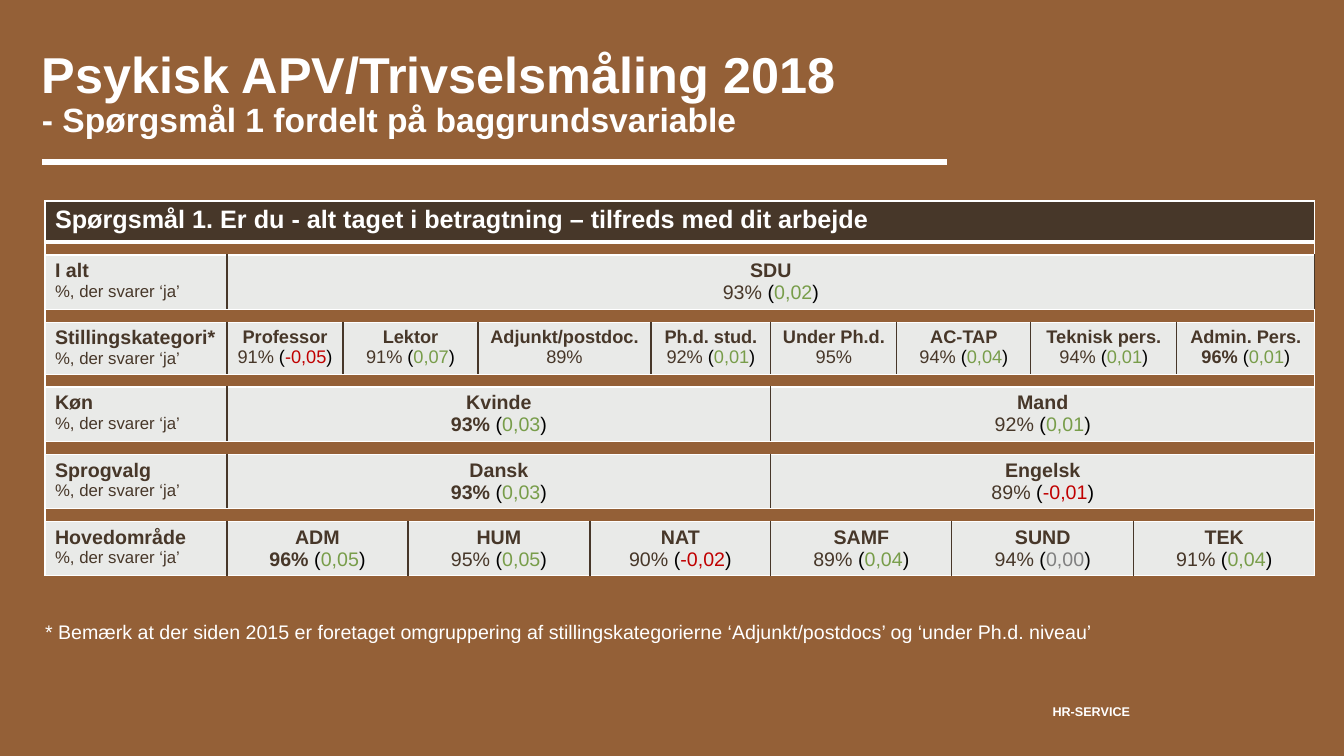
import collections
import lxml.etree
import pptx
import pptx.dml.color
import pptx.enum.shapes
import pptx.enum.text
import pptx.oxml.ns
import pptx.util

EMU_PER_PX = 914400 / 100.8
COLORS = {
    "background": "946037", "dark": "473729", "cell": "E9EAE8", "white": "FFFFFF",
    "black": "000000", "rise": "789D4A", "fall": "C00000", "same": "808080",
}
ALIGN = pptx.enum.text.PP_ALIGN
ANCHOR = pptx.enum.text.MSO_ANCHOR

Answer = collections.namedtuple("Answer", "name share change span bold", defaults=(False,))
Question = collections.namedtuple("Question", "label height size answers")

COLUMN_WIDTHS = [182, 116, 65, 70, 112, 61, 120, 126, 55, 79, 103, 43, 138]
HEADER_HEIGHT, GAP_HEIGHT = 41, 13
QUESTIONS = [
    Question("I alt", 54, 14, [Answer("SDU", "93%", "0,02", 12)]),
    Question("Stillingskategori*", 52, 13, [
        Answer("Professor", "91%", "-0,05", 1),
        Answer("Lektor", "91%", "0,07", 2),
        Answer("Adjunkt/postdoc.", "89%", "", 2),
        Answer("Ph.d. stud.", "92%", "0,01", 1),
        Answer("Under Ph.d.", "95%", "", 1),
        Answer("AC-TAP", "94%", "0,04", 2),
        Answer("Teknisk pers.", "94%", "0,01", 2),
        Answer("Admin. Pers.", "96%", "0,01", 1, True),
    ]),
    Question("Køn", 54, 14, [
        Answer("Kvinde", "93%", "0,03", 6, True),
        Answer("Mand", "92%", "0,01", 6),
    ]),
    Question("Sprogvalg", 54, 14, [
        Answer("Dansk", "93%", "0,03", 6, True),
        Answer("Engelsk", "89%", "-0,01", 6),
    ]),
    Question("Hovedområde", 54, 14, [
        Answer("ADM", "96%", "0,05", 2, True),
        Answer("HUM", "95%", "0,05", 2),
        Answer("NAT", "90%", "-0,02", 2),
        Answer("SAMF", "89%", "0,04", 2),
        Answer("SUND", "94%", "0,00", 2),
        Answer("TEK", "91%", "0,04", 2),
    ]),
]


def px(length):
    return pptx.util.Emu(round(length * EMU_PER_PX))


def rgb(color):
    return pptx.dml.color.RGBColor.from_string(COLORS[color])


def change_color(change):
    if change.startswith("-"):
        return "fall"
    return "same" if change == "0,00" else "rise"


class SlideBuilder:
    font_name = "Arial"

    def __init__(self, presentation):
        self.slide = presentation.slides.add_slide(presentation.slide_layouts[5])
        self.slide.background.fill.solid()
        self.slide.background.fill.fore_color.rgb = rgb("background")

    def run(self, paragraph, text, size, color, bold=False):
        run = paragraph.add_run()
        run.text = text
        run.font.name = self.font_name
        run.font.size = pptx.util.Pt(size)
        run.font.bold = bold
        run.font.color.rgb = rgb(color)

    def frame(self, shape, anchor, wrap):
        frame = shape.text_frame
        frame.margin_left = frame.margin_right = frame.margin_top = frame.margin_bottom = 0
        frame.vertical_anchor = anchor
        frame.word_wrap = wrap
        frame.auto_size = pptx.enum.text.MSO_AUTO_SIZE.NONE
        return frame.paragraphs[0]

    def title(self, left, top, width, height, heading, subheading):
        shape = self.slide.shapes.title
        shape.left, shape.top, shape.width, shape.height = map(px, (left, top, width, height))
        paragraph = self.frame(shape, ANCHOR.TOP, True)
        paragraph.alignment = ALIGN.LEFT
        paragraph.line_spacing = 0.89
        self.run(paragraph, heading, 36, "white", True)
        paragraph.add_line_break()
        self.run(paragraph, subheading, 24, "white", True)

    def text(self, left, top, width, height, text, size, bold=False,
             alignment=ALIGN.LEFT, anchor=ANCHOR.TOP, wrap=True):
        shape = self.slide.shapes.add_textbox(*map(px, (left, top, width, height)))
        paragraph = self.frame(shape, anchor, wrap)
        paragraph.alignment = alignment
        self.run(paragraph, text, size, "white", bold)

    def rule(self, left, right, y, weight):
        line = self.slide.shapes.add_connector(
            pptx.enum.shapes.MSO_CONNECTOR.STRAIGHT, px(left), px(y), px(right), px(y))
        line.line.color.rgb = rgb("white")
        line.line.width = pptx.util.Pt(weight)
        lxml.etree.SubElement(line._element.spPr, pptx.oxml.ns.qn("a:effectLst"))

    def borders(self, cell, left, right, bottom_weight):
        properties = cell._tc.get_or_add_tcPr()
        sides = [("L", left, 1), ("R", right, 1), ("T", "white", 1), ("B", "white", bottom_weight)]
        for side, color, weight in sides:
            line = lxml.etree.SubElement(
                properties, pptx.oxml.ns.qn(f"a:ln{side}"), w=str(pptx.util.Pt(weight)))
            fill = lxml.etree.SubElement(line, pptx.oxml.ns.qn("a:solidFill"))
            lxml.etree.SubElement(fill, pptx.oxml.ns.qn("a:srgbClr"), val=COLORS[color])

    def block(self, table, row, column, span, fill, left="white", right="white", bottom_weight=1):
        for index in range(column, column + span):
            cell = table.cell(row, index)
            self.borders(cell, left, right, bottom_weight)
            if fill:
                cell.fill.solid()
                cell.fill.fore_color.rgb = rgb(fill)
            else:
                cell.fill.background()
        origin = table.cell(row, column)
        if span > 1:
            origin.merge(table.cell(row, column + span - 1))
        return origin

    def gap_row(self, table, row):
        self.block(table, row, 0, len(COLUMN_WIDTHS), None)
        for cell in table.rows[row].cells:
            cell.margin_top = cell.margin_bottom = 0
            lxml.etree.SubElement(
                cell.text_frame.paragraphs[0]._p, pptx.oxml.ns.qn("a:endParaRPr"), sz="200")

    def question_row(self, table, row, question):
        label = self.block(table, row, 0, 1, "cell", right="dark").text_frame
        self.run(label.paragraphs[0], question.label, 14, "dark", True)
        self.run(label.add_paragraph(), "%, der svarer ‘ja’", 12, "dark")
        column = 1
        for index, answer in enumerate(question.answers):
            last = 0 < index == len(question.answers) - 1
            cell = self.block(table, row, column, answer.span, "cell",
                              left="dark", right="white" if last else "dark")
            self.answer(cell.text_frame, answer, question.size)
            column += answer.span

    def answer(self, frame, answer, size):
        name, result = frame.paragraphs[0], frame.add_paragraph()
        name.alignment = result.alignment = ALIGN.CENTER
        self.run(name, answer.name, size, "dark", True)
        self.run(result, answer.share, size, "dark", answer.bold)
        if answer.change:
            self.run(result, " (", size, "black")
            self.run(result, answer.change, size, change_color(answer.change))
            self.run(result, ")", size, "black")

    def table(self, left, top, heading, questions):
        heights = [HEADER_HEIGHT]
        for question in questions:
            heights += [GAP_HEIGHT, question.height]
        table = self.slide.shapes.add_table(
            len(heights), len(COLUMN_WIDTHS), px(left), px(top),
            px(sum(COLUMN_WIDTHS)), px(sum(heights))).table
        table.first_row = table.horz_banding = False
        for column, width in zip(table.columns, COLUMN_WIDTHS):
            column.width = px(width)
        for row, height in zip(table.rows, heights):
            row.height = px(height)
        header = self.block(table, 0, 0, len(COLUMN_WIDTHS), "dark", bottom_weight=3)
        self.run(header.text_frame.paragraphs[0], heading, 18, "white", True)
        for index, question in enumerate(questions):
            self.gap_row(table, 2 * index + 1)
            self.question_row(table, 2 * index + 2, question)


def main():
    presentation = pptx.Presentation()
    presentation.slide_width, presentation.slide_height = px(1344), px(756)
    builder = SlideBuilder(presentation)
    builder.text(762, 680, 368, 39, "HR-SERVICE", 9, True, ALIGN.RIGHT, ANCHOR.BOTTOM)
    builder.title(42, 50, 1258, 138, "Psykisk APV/Trivselsmåling 2018",
                  "- Spørgsmål 1 fordelt på baggrundsvariable")
    builder.table(45, 201, "Spørgsmål 1. Er du - alt taget i betragtning – tilfreds med dit arbejde",
                  QUESTIONS)
    builder.rule(42, 947, 162, 3.75)
    builder.text(45, 620, 1052, 24, "* Bemærk at der siden 2015 er foretaget omgruppering af "
                 "stillingskategorierne ‘Adjunkt/postdocs’ og ‘under Ph.d. niveau’", 14, wrap=False)
    presentation.save("out.pptx")


if __name__ == "__main__":
    main()
